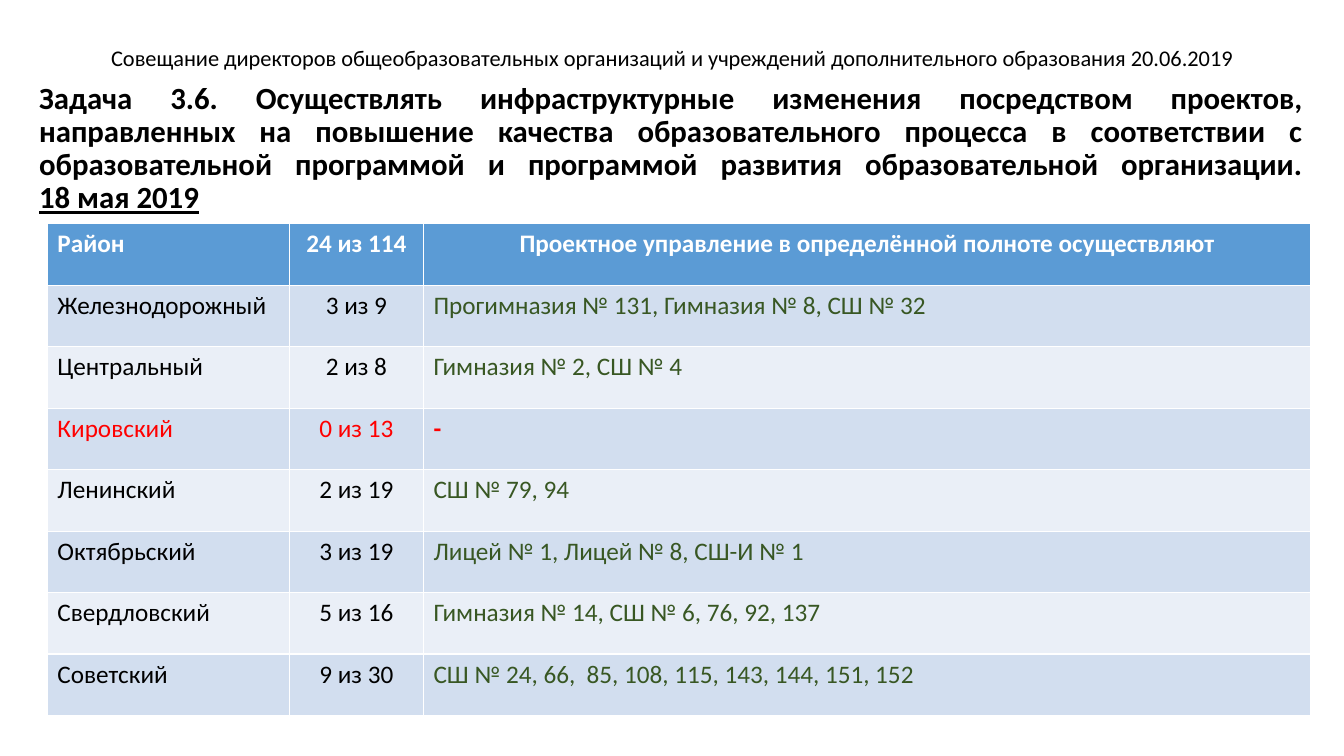
from pptx import Presentation
from pptx.dml.color import RGBColor
from pptx.enum import text
from pptx.util import Inches, Pt

TITLE = ("Совещание директоров общеобразовательных организаций "
         "и учреждений дополнительного образования 20.06.2019")
TASK = ("Задача 3.6. Осуществлять инфраструктурные изменения посредством проектов, "
        "направленных на повышение качества образовательного процесса в соответствии "
        "с образовательной программой и программой развития образовательной организации.")
TASK_DATE = "18 мая 2019"
HEADER = ("Район", "24 из 114", "Проектное управление в определённой полноте осуществляют")
DISTRICTS = [
    ("Железнодорожный", "3 из 9", "Прогимназия № 131, Гимназия № 8, СШ № 32"),
    ("Центральный", "2 из 8", "Гимназия № 2, СШ № 4"),
    ("Кировский", "0 из 13", "-"),
    ("Ленинский", "2 из 19", "СШ № 79, 94"),
    ("Октябрьский", "3 из 19", "Лицей № 1, Лицей № 8, СШ-И № 1"),
    ("Свердловский", "5 из 16", "Гимназия № 14, СШ № 6, 76, 92, 137"),
    ("Советский", "9 из 30", "СШ № 24, 66,  85, 108, 115, 143, 144, 151, 152"),
]
NO_SCHOOLS = "-"
COLUMN_WIDTHS = (2.4, 1.33, 8.8)
ROW_HEIGHT = 0.61
BLACK, WHITE, RED, GREEN = "000000", "FFFFFF", "FF0000", "385723"
HEADER_FILL, BAND_FILLS = "5B9BD5", ("D2DEEF", "EAEFF7")
LEFT, CENTER, JUSTIFY = (text.PP_ALIGN.LEFT, text.PP_ALIGN.CENTER, text.PP_ALIGN.JUSTIFY)


def color(value):
    return RGBColor.from_string(value)


def add_span(para, content, size, ink, **formats):
    span = para.add_run()
    span.text = content
    span.font.color.rgb = color(ink)
    for name, value in {"name": "Calibri", "size": Pt(size), **formats}.items():
        setattr(span.font, name, value)


def add_title(page):
    title = page.shapes.title
    place = {"left": 0.92, "top": 0.4, "width": 11.5, "height": 0.37}
    for name, value in place.items():
        setattr(title, name, Inches(value))
    frame = title.text_frame
    frame.auto_size = text.MSO_AUTO_SIZE.NONE
    frame.vertical_anchor = text.MSO_ANCHOR.MIDDLE
    para = frame.paragraphs[0]
    para.alignment, para.line_spacing = CENTER, 0.9
    add_span(para, TITLE, 16, BLACK)


def add_task(page):
    box = page.shapes.add_textbox(Inches(0.29), Inches(0.77), Inches(12.73), Inches(1.42))
    box.text_frame.word_wrap = True
    para = box.text_frame.paragraphs[0]
    para.alignment, para.line_spacing = JUSTIFY, 0.9
    add_span(para, TASK, 22, BLACK, bold=True)
    para.add_line_break()
    add_span(para, TASK_DATE, 22, BLACK, bold=True, underline=True)


def cell_style(row, column, schools):
    """Return the fill, the text colour and whether the text is bold."""
    if row == 0:
        return HEADER_FILL, WHITE, True
    fill = BAND_FILLS[(row - 1) % 2]
    if schools == NO_SCHOOLS:
        return fill, RED, column == 2
    return fill, GREEN if column == 2 else BLACK, False


def add_district_table(page):
    rows = [HEADER, *DISTRICTS]
    table = page.shapes.add_table(
        len(rows), len(COLUMN_WIDTHS), Inches(0.47), Inches(2.22),
        Inches(sum(COLUMN_WIDTHS)), Inches(ROW_HEIGHT * len(rows))).table
    for column, width in zip(table.columns, COLUMN_WIDTHS):
        column.width = Inches(width)
    for r, values in enumerate(rows):
        table.rows[r].height = Inches(ROW_HEIGHT)
        for c, value in enumerate(values):
            fill, ink, bold = cell_style(r, c, values[2])
            cell = table.cell(r, c)
            cell.fill.solid()
            cell.fill.fore_color.rgb = color(fill)
            para = cell.text_frame.paragraphs[0]
            para.alignment = CENTER if c == 1 or (r == 0 and c == 2) else LEFT
            add_span(para, value, 18, ink, bold=bold)


def main():
    deck = Presentation()
    deck.slide_width, deck.slide_height = Inches(13.33), Inches(7.5)
    page = deck.slides.add_slide(deck.slide_layouts.get_by_name("Title Only"))
    add_title(page)
    add_task(page)
    add_district_table(page)
    deck.save("out.pptx")


if __name__ == "__main__":
    main()
